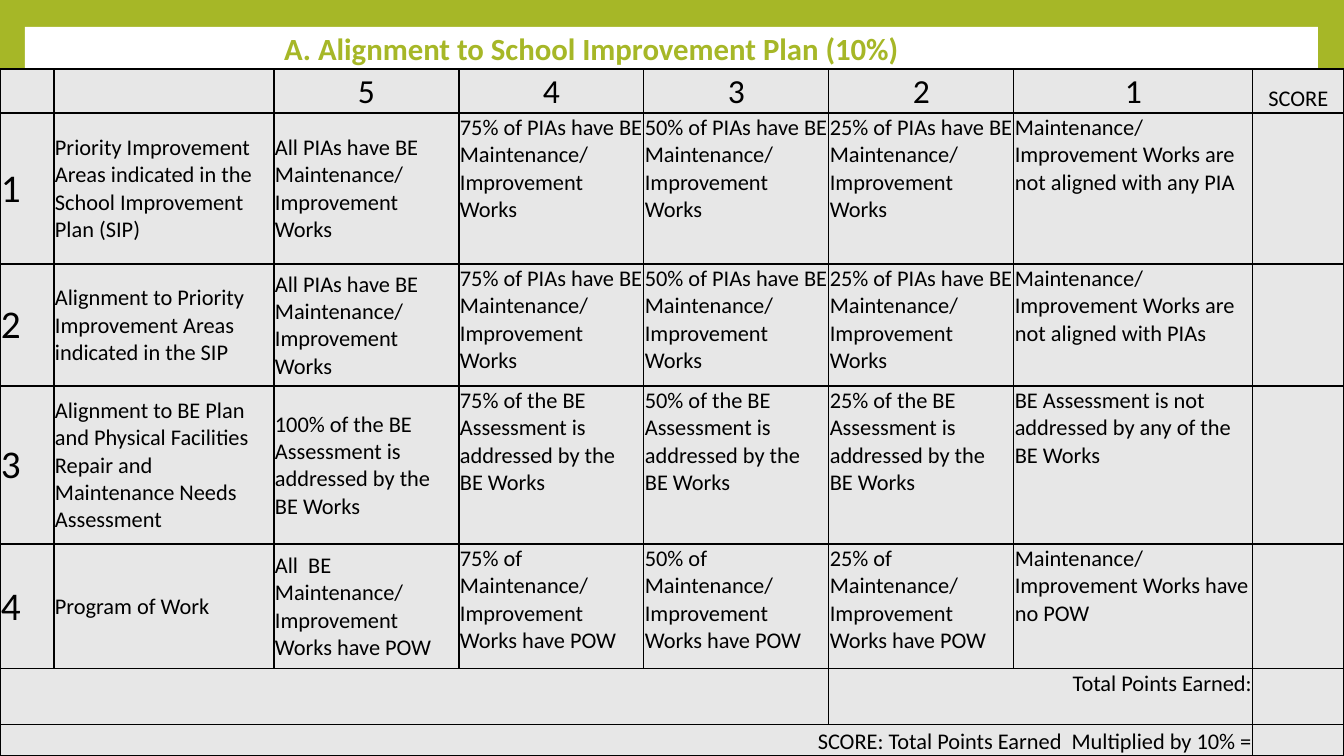
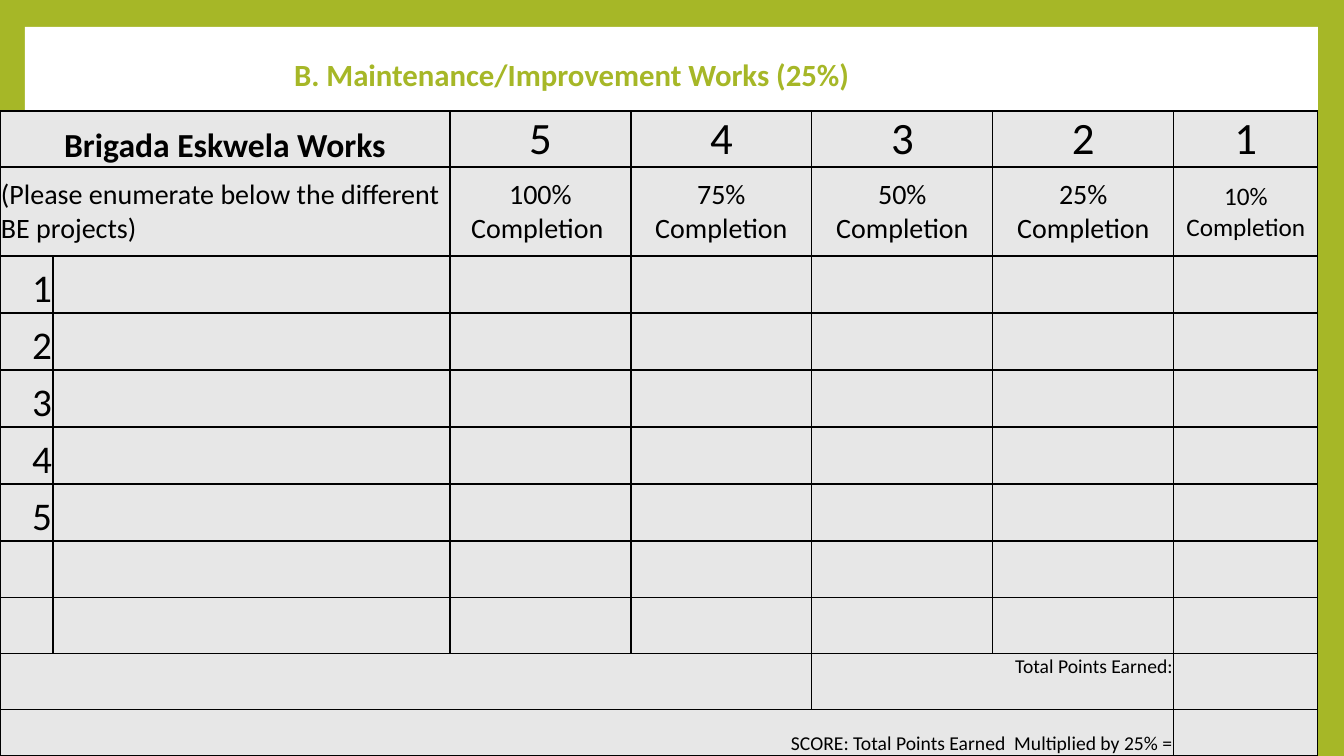
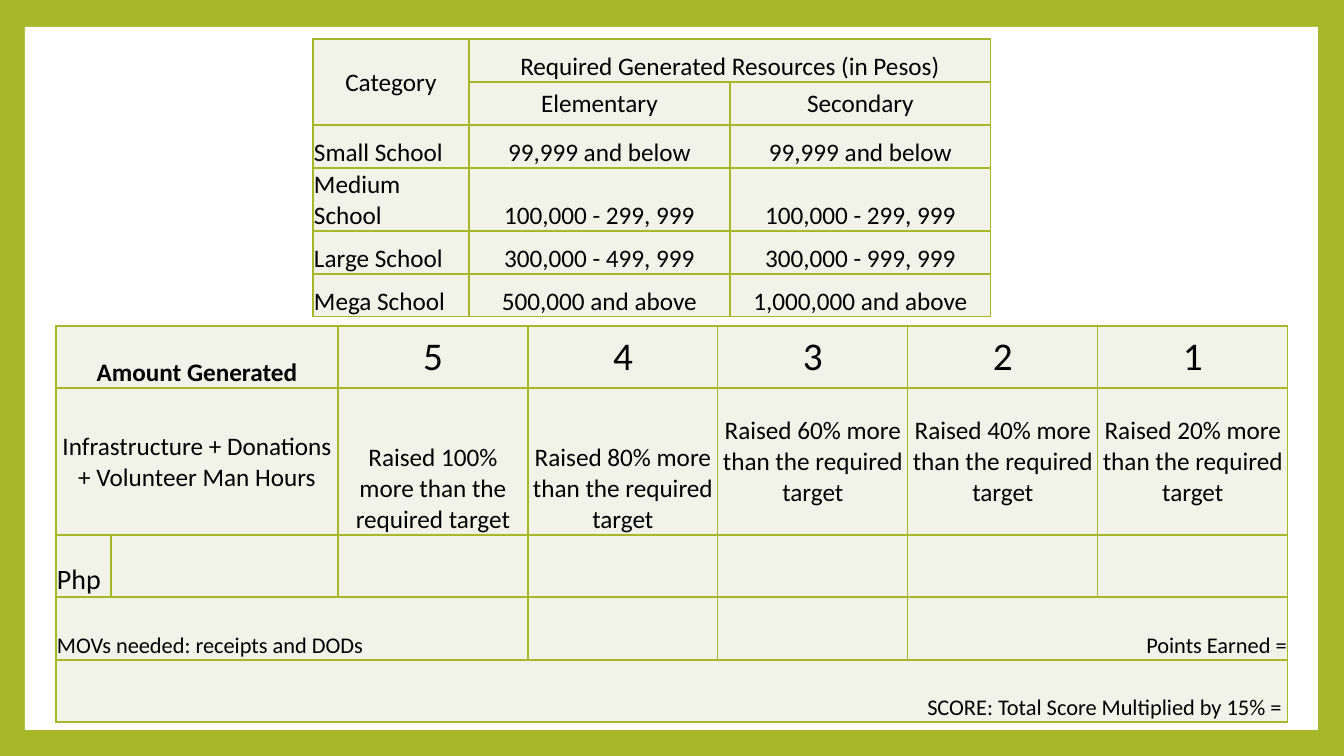
from dataclasses import dataclass

from lxml.etree import SubElement
from pptx import Presentation
from pptx.dml.color import RGBColor
from pptx.enum.shapes import MSO_SHAPE
from pptx.enum.text import MSO_ANCHOR, MSO_AUTO_SIZE, PP_ALIGN
from pptx.oxml.ns import qn
from pptx.util import Emu, Pt

EMU_PER_PX = 12192000 / 1344
FONT = "Calibri"
COLORS = {
    "green": "A6B727",
    "white": "FFFFFF",
    "black": "000000",
    "gray": "E7E7E7",
    "pale": "F1F3E8",
}
LEFT, CENTER, RIGHT = PP_ALIGN.LEFT, PP_ALIGN.CENTER, PP_ALIGN.RIGHT
TOP, MIDDLE, BOTTOM = MSO_ANCHOR.TOP, MSO_ANCHOR.MIDDLE, MSO_ANCHOR.BOTTOM
TITLE_ONLY, BLANK = 5, 6
POINTS = "54321"


@dataclass
class Cell:
    """Text and format of a table cell; across and down are its spans."""
    text: str = ""
    size: int = 18
    align: PP_ALIGN = LEFT
    anchor: MSO_ANCHOR = MIDDLE
    bold: bool = False
    across: int = 1
    down: int = 1


def px(length):
    """Round down, so that summed parts never exceed their whole."""
    return Emu(int(length * EMU_PER_PX))


def rgb(name):
    return RGBColor.from_string(COLORS[name])


def write_text(frame, text, size=18, color="black", bold=False, align=LEFT):
    para = frame.paragraphs[0]
    para.alignment = align
    if text:
        span = para.add_run()
        span.text = text
        span.font.name = FONT
        span.font.size = Pt(size)
        span.font.bold = bold
        span.font.color.rgb = rgb(color)
    else:
        SubElement(para._p, qn("a:endParaRPr"), sz=str(size * 100))
    return para


def color_background(deck):
    fill = deck.slide_master.background.fill
    fill.solid()
    fill.fore_color.rgb = rgb("green")


def add_panel(slide):
    """Lay the white panel behind everything else on the slide."""
    panel = slide.shapes.add_shape(
        MSO_SHAPE.RECTANGLE, px(25), px(27), px(1293), px(703))
    panel.shadow.inherit = False
    panel.fill.solid()
    panel.fill.fore_color.rgb = rgb("white")
    panel.line.fill.background()
    slide.shapes[0]._element.addprevious(panel._element)


def set_title(slide, text, left, top, width):
    title = slide.shapes.title
    title.left, title.top = px(left), px(top)
    title.width, title.height = px(width), px(40)
    frame = title.text_frame
    frame.word_wrap = True
    frame.auto_size = MSO_AUTO_SIZE.NONE
    frame.vertical_anchor = MIDDLE
    para = write_text(frame, text, size=22, color="green", bold=True)
    para.line_spacing = 0.9


def style_cell(cell, fill, border):
    cell.margin_left = cell.margin_right = cell.margin_top = px(1)
    cell.margin_bottom = 0
    cell.fill.solid()
    cell.fill.fore_color.rgb = rgb(fill)
    properties = cell._tc.get_or_add_tcPr()
    for position, side in enumerate(("lnL", "lnR", "lnT", "lnB")):
        line = SubElement(properties, qn(f"a:{side}"), w=str(Pt(1)))
        paint = SubElement(line, qn("a:solidFill"))
        SubElement(paint, qn("a:srgbClr"), val=COLORS[border])
        properties.insert(position, line)


def add_grid(slide, left, top, widths, heights, rows, fill, border):
    """Draw rows of Cell; None stands for a place covered from above."""
    table = slide.shapes.add_table(
        len(heights), len(widths), px(left), px(top),
        px(sum(widths)), px(sum(heights))).table
    table.first_row = table.horz_banding = False
    for column, width in zip(table.columns, widths):
        column.width = px(width)
    for row, height in zip(table.rows, heights):
        row.height = px(height)
    for cell in table.iter_cells():
        style_cell(cell, fill, border)
    for row_index, row in enumerate(rows):
        column_index = 0
        for item in row:
            if item is None:
                column_index += 1
                continue
            cell = table.cell(row_index, column_index)
            column_index += item.across
            if item.across > 1 or item.down > 1:
                cell.merge(table.cell(row_index + item.down - 1,
                                      column_index - 1))
            cell.vertical_anchor = item.anchor
            write_text(cell.text_frame, item.text, size=item.size,
                       bold=item.bold, align=item.align)


def point_cells(size, anchor=MIDDLE):
    return [Cell(point, size, CENTER, anchor) for point in POINTS]


def total_rows(percent, blank_span, size):
    """Closing rows of a scoring table, with an empty score cell each."""
    return [
        [Cell(across=blank_span),
         Cell("Total Points Earned:", size, RIGHT, TOP, across=2),
         Cell(size=size)],
        [Cell(f"SCORE: Total Points Earned  Multiplied by {percent} =", size,
              RIGHT, BOTTOM, across=blank_span + 2), Cell(size=size)],
    ]


def build_alignment(slide):
    set_title(slide, "A. Alignment to School Improvement Plan (10%)",
              274, 31, 746)
    works = "Maintenance/ Improvement Works"
    pias = f"PIAs have BE {works}"
    assessment = "of the BE Assessment is addressed by the BE Works"
    criteria = [
        ("Priority Improvement Areas indicated in the School Improvement "
         "Plan (SIP)", f"All {pias}", f"of {pias}",
         f"{works} are not aligned with any PIA"),
        ("Alignment to Priority Improvement Areas indicated in the SIP",
         f"All {pias}", f"of {pias}", f"{works} are not aligned with PIAs"),
        ("Alignment to BE Plan and Physical Facilities Repair and "
         "Maintenance Needs Assessment", f"100% {assessment}", assessment,
         "BE Assessment is not addressed by any of the BE Works"),
        ("Program of Work", f"All  BE {works} have POW",
         f"of {works} have POW", f"{works} have no POW"),
    ]
    rows = [[Cell(), Cell(), *point_cells(24, BOTTOM),
             Cell("SCORE", 16, CENTER, BOTTOM)]]
    for number, (criterion, full, partial, none) in enumerate(criteria, 1):
        shares = [f"{share}% {partial}" for share in (75, 50, 25)]
        rows.append([
            Cell(str(number), 28), Cell(criterion, 16), Cell(full, 16),
            *[Cell(text, 16, anchor=TOP) for text in (*shares, none)],
            Cell()])
    rows += total_rows("10%", 5, 16)
    add_grid(slide, 0, 69, [54, 220, *[185] * 4, 239, 91],
             [44, 151, 122, 158, 125, 56, 31], rows, "gray", "black")


def build_works(slide):
    set_title(slide, "B. Maintenance/Improvement Works (25%)", 284, 57, 665)
    completion = [("100% Completion ", 20), ("75% Completion", 20),
                  ("50% Completion", 20), ("25% Completion", 20),
                  ("10% Completion", 18)]
    rows = [
        [Cell("Brigada Eskwela Works", 24, CENTER, BOTTOM, True, across=2),
         *point_cells(32)],
        [Cell("(Please enumerate below the different BE projects)", 20,
              across=2),
         *[Cell(text, size, CENTER) for text, size in completion]],
    ]
    for number in ("1", "2", "3", "4", "5", "", ""):
        rows.append([Cell(number, 28, RIGHT, BOTTOM)])
    rows += total_rows("25%", 4, 14)
    add_grid(slide, 0, 111, [53, 397, *[181] * 4, 144],
             [56, 89, *[57] * 6, *[56] * 2, 46], rows, "gray", "black")


def build_resources(slide):
    categories = [
        ("Small School", "99,999 and below", "99,999 and below"),
        ("Medium School", "100,000 - 299, 999", "100,000 - 299, 999"),
        ("Large School", "300,000 - 499, 999", "300,000 - 999, 999"),
        ("Mega School", "500,000 and above", "1,000,000 and above"),
    ]
    rows = [
        [Cell("Category", align=CENTER, down=2),
         Cell("Required Generated Resources (in Pesos)", align=CENTER,
              anchor=BOTTOM, across=2)],
        [None, Cell("Elementary", align=CENTER),
         Cell("Secondary", align=CENTER)],
    ]
    for category, *amounts in categories:
        rows.append([Cell(category, anchor=BOTTOM),
                     *[Cell(amount, align=CENTER, anchor=BOTTOM)
                       for amount in amounts]])
    add_grid(slide, 313, 39, [156, 261, 261], [43, 43, 43, 63, 43, 43],
             rows, "pale", "green")

    targets = [(100, BOTTOM), (80, BOTTOM), (60, MIDDLE), (40, MIDDLE),
               (20, MIDDLE)]
    rows = [
        [Cell("Amount Generated", 18, CENTER, BOTTOM, True, across=2),
         *point_cells(28)],
        [Cell("Infrastructure + Donations + Volunteer Man Hours",
              align=CENTER, across=2),
         *[Cell(f"Raised {share}% more than the required target",
                align=CENTER, anchor=anchor) for share, anchor in targets]],
        [Cell("Php", 20, anchor=BOTTOM)],
        [Cell("MOVs needed: receipts and DODs", 16, anchor=BOTTOM, across=3),
         Cell(), Cell(),
         Cell("Points Earned =", 16, RIGHT, BOTTOM, across=2)],
        [Cell("SCORE: Total Score Multiplied by 15% = ", 16, RIGHT, BOTTOM,
              across=7)],
    ]
    add_grid(slide, 56, 326, [55, 227, *[190] * 5], [62, 147, 62, 63, 62],
             rows, "pale", "green")


def main():
    deck = Presentation()
    deck.slide_width, deck.slide_height = px(1344), px(756)
    color_background(deck)
    pages = [(TITLE_ONLY, build_alignment), (TITLE_ONLY, build_works),
             (BLANK, build_resources)]
    for layout, build in pages:
        slide = deck.slides.add_slide(deck.slide_layouts[layout])
        build(slide)
        add_panel(slide)
    deck.save("out.pptx")


if __name__ == "__main__":
    main()
